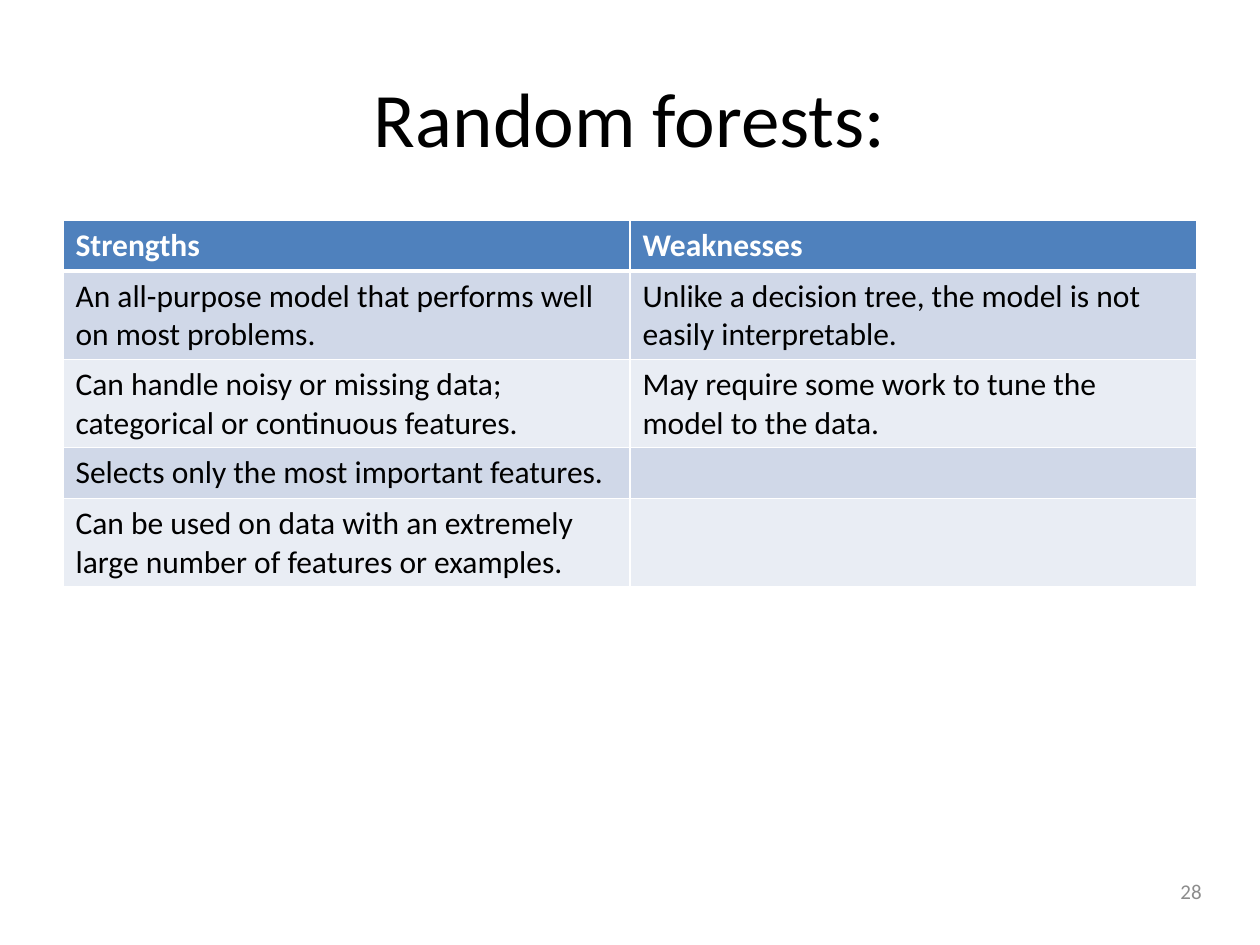
from lxml import etree
from pptx import Presentation
from pptx import util as u
from pptx.dml.color import RGBColor
from pptx.enum import text
from pptx.oxml.ns import qn

PX = u.Inches(1) / 126
FONT = "Calibri"
HUES = {
    "ink": "000000",
    "paper": "FFFFFF",
    "head": "4F81BD",
    "odd": "D0D8E8",
    "even": "E9EDF4",
    "note": "8C8C8C",
}
ROWS = [
    ("Strengths", "Weaknesses"),
    ("An all-purpose model that performs well on most problems.",
     "Unlike a decision tree, the model is not easily interpretable."),
    ("Can handle noisy or missing data; categorical or continuous features.",
     "May require some work to tune the model to the data."),
    ("Selects only the most important features.", ""),
    ("Can be used on data with an extremely large number of features or examples.", ""),
]


def px(*sizes):
    return [u.Emu(round(size * PX)) for size in sizes]


def style(par, size, hue, bold=False):
    font = par.font
    font.name, font.size, font.bold = FONT, u.Pt(size), bold
    font.color.rgb = RGBColor.from_string(HUES[hue])


def add_text(slide, box, words, size, hue, align):
    frame = slide.shapes.add_textbox(*px(*box)).text_frame
    frame.word_wrap = True
    frame.vertical_anchor = text.MSO_ANCHOR.MIDDLE
    par = frame.paragraphs[0]
    par.text, par.alignment = words, align
    style(par, size, hue)


def add_edges(cell, base):
    props = cell._tc.get_or_add_tcPr()
    for side, width in (("L", 1), ("R", 1), ("T", 1), ("B", base)):
        line = etree.SubElement(props, qn(f"a:ln{side}"), w=str(u.Pt(width)))
        fill = etree.SubElement(line, qn("a:solidFill"))
        etree.SubElement(fill, qn("a:srgbClr"), val=HUES["paper"])


def add_grid(slide, box, rows):
    table = slide.shapes.add_table(len(rows), len(rows[0]), *px(*box)).table
    for r, row in enumerate(rows):
        head = r == 0
        shade = "head" if head else "odd" if r % 2 else "even"
        for c, words in enumerate(row):
            cell = table.cell(r, c)
            cell.text = words
            style(cell.text_frame.paragraphs[0], 18, "paper" if head else "ink", head)
            add_edges(cell, 3 if head else 1)
            cell.fill.solid()
            cell.fill.fore_color.rgb = RGBColor.from_string(HUES[shade])


def main():
    deck = Presentation()
    deck.slide_width, deck.slide_height = px(1260, 945)
    slide = deck.slides.add_slide(deck.slide_layouts[6])
    add_text(slide, (920, 866, 294, 50), "28", 12, "note", text.PP_ALIGN.RIGHT)
    add_text(slide, (63, 38, 1134, 158), "Random forests:", 44, "ink", text.PP_ALIGN.CENTER)
    add_grid(slide, (63, 220, 1134, 255), ROWS)
    deck.save("out.pptx")


if __name__ == "__main__":
    main()
